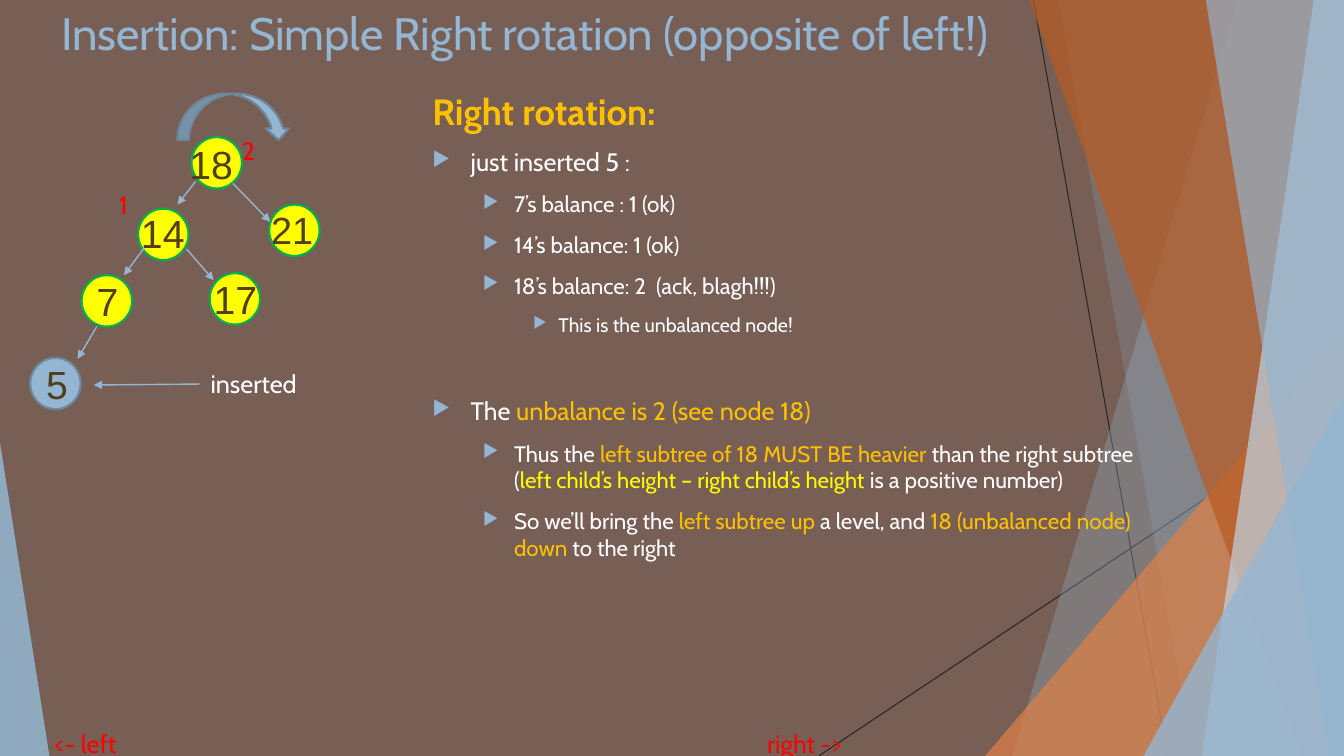
from dataclasses import dataclass

from pptx import Presentation
from pptx.dml.color import RGBColor
from pptx.enum.shapes import MSO_CONNECTOR as Link, MSO_SHAPE as Preset
from pptx.enum.text import MSO_ANCHOR as Anchor
from pptx.oxml.ns import qn
from pptx.util import Inches, Pt
from lxml.etree import SubElement


@dataclass(frozen=True)
class Theme:
    background: str = "775F55"
    accent: str = "94B6D2"
    outline: str = "6D879B"
    pale: str = "BFD3E4"
    orange: str = "DD8047"
    rust: str = "B95B22"
    hairline: str = "262626"
    node: str = "FFFF00"
    ring: str = "00B050"
    digit: str = "513E1B"
    body: str = "FFFFFF"
    key: str = "FFC000"
    alert: str = "FF0000"
    font: str = "Cabin"
    digit_font: str = "Arial"
    title_size: float = 32.4
    heading_size: float = 26
    digit_size: float = 28
    label_size: float = 18
    level_sizes: tuple = (18, 16, 14)
    level_indents: tuple = ((0.38, 0.38), (0.81, 0.31), (1.25, 0.25))


class SlideBuilder:
    def __init__(self, slide, theme):
        self.slide = slide
        self.theme = theme
        slide.background.fill.solid()
        slide.background.fill.fore_color.rgb = RGBColor.from_string(theme.background)

    def paint(self, shape, color, opacity=100, outline=None):
        shape.shadow.inherit = False
        shape.fill.solid()
        shape.fill.fore_color.rgb = RGBColor.from_string(color)
        if opacity < 100:
            tint = shape._element.spPr.find(qn("a:solidFill"))[0]
            SubElement(tint, qn("a:alpha")).set("val", str(opacity * 1000))
        if outline:
            shape.line.color.rgb = RGBColor.from_string(outline)
            shape.line.width = Pt(1.5)
        else:
            shape.line.fill.background()

    def preset(self, kind, box, color, opacity=100, outline=None, apex=None):
        shape = self.slide.shapes.add_shape(kind, *map(Inches, box))
        if apex is not None:
            shape.adjustments[0] = apex
        self.paint(shape, color, opacity, outline)

    def panel(self, top_left, bottom_left, color, opacity):
        right, bottom = 13.33, 7.5
        outline = self.slide.shapes.build_freeform(Inches(top_left), 0)
        corners = [(right, 0), (right, bottom), (bottom_left, bottom)]
        outline.add_line_segments([(Inches(x), Inches(y)) for x, y in corners])
        self.paint(outline.convert_to_shape(), color, opacity)

    def line(self, start, end, color, width, arrow=False):
        link = self.slide.shapes.add_connector(
            Link.STRAIGHT, *map(Inches, start + end))
        link.line.color.rgb = RGBColor.from_string(color)
        link.line.width = Pt(width)
        if arrow:
            SubElement(link.line._get_or_add_ln(), qn("a:tailEnd")).set("type", "triangle")
        SubElement(link._element.spPr, qn("a:effectLst"))

    def style(self, run, size, color, font=None, bold=False):
        run.font.name = font or self.theme.font
        run.font.size = Pt(size)
        run.font.bold = bold
        run.font.color.rgb = RGBColor.from_string(color)

    def frame(self, box):
        frame = self.slide.shapes.add_textbox(*map(Inches, box)).text_frame
        frame.word_wrap = True
        return frame

    def label(self, text, box, size, color, font=None):
        frame = self.frame(box)
        frame.text = text
        self.style(frame.paragraphs[0].runs[0], size, color, font)
        return frame

    def tree_node(self, value, circle, label, color, outline, size):
        self.preset(Preset.OVAL, (*circle, 0.5, 0.51), color, outline=outline)
        self.label(value, (*label, 0.65, 0.57), size, self.theme.digit,
                   self.theme.digit_font)

    def side_markers(self, text, box, stop):
        frame = self.label(text, box, self.theme.label_size, self.theme.alert)
        frame.vertical_anchor = Anchor.MIDDLE
        stops = SubElement(frame.paragraphs[0]._p.get_or_add_pPr(), qn("a:tabLst"))
        tab = SubElement(stops, qn("a:tab"))
        tab.set("pos", str(Inches(stop)))
        tab.set("algn", "l")

    def bullet(self, paragraph, level, pieces, gap):
        paragraph.level = level
        paragraph.space_before = Pt(gap)
        for text, color in pieces:
            if text == "\n":
                paragraph.add_line_break()
                continue
            run = paragraph.add_run()
            run.text = text
            self.style(run, self.theme.level_sizes[level], color)
        margin, hanging = self.theme.level_indents[level]
        props = paragraph._p.get_or_add_pPr()
        props.set("marL", str(Inches(margin)))
        props.set("indent", str(-Inches(hanging)))
        tint = SubElement(props, qn("a:buClr"))
        SubElement(tint, qn("a:srgbClr")).set("val", self.theme.accent)
        SubElement(props, qn("a:buSzPct")).set("val", "80000")
        SubElement(props, qn("a:buChar")).set("char", "▶")

    def explanation(self, heading, points, box):
        frame = self.frame(box)
        frame.text = heading
        frame.paragraphs[0].space_before = Pt(10)
        self.style(frame.paragraphs[0].runs[0], self.theme.heading_size,
                   self.theme.key, bold=True)
        for level, pieces, gap in points:
            self.bullet(frame.add_paragraph(), level, pieces, gap)


def main():
    deck = Presentation()
    deck.slide_width, deck.slide_height = Inches(13.33), Inches(7.5)
    theme = Theme()
    page = SlideBuilder(deck.slides.add_slide(deck.slide_layouts[6]), theme)

    page.line((10.25, 0), (11.58, 7.5), theme.hairline, 0.75)
    page.line((13.33, 4.03), (8.12, 7.5), theme.hairline, 0.75)
    page.panel(12.28, 10.04, theme.accent, 30)
    page.panel(10.5, 11.83, theme.accent, 20)
    page.preset(Preset.ISOSCELES_TRIANGLE, (9.77, 3.33, 3.56, 4.17), theme.orange, 72, apex=1)
    page.panel(10.21, 12.91, theme.rust, 70)
    page.panel(13.03, 11.92, theme.pale, 70)
    page.panel(11.96, 13.18, theme.accent, 65)
    page.preset(Preset.ISOSCELES_TRIANGLE, (11.34, 3.93, 1.99, 3.57), theme.accent, 80, apex=1)
    page.preset(Preset.ISOSCELES_TRIANGLE, (0, 4.39, 0.49, 3.11), theme.accent, 85, apex=0)

    page.label("Insertion: Simple Right rotation (opposite of left!)",
               (0.51, 0, 10.45, 0.77), theme.title_size, theme.accent)
    page.side_markers("<- left\tright ->", (0.44, 7.18, 11.74, 0.4), 7.07)

    plain, key = theme.body, theme.key
    points = [
        (0, [("just inserted 5 :", plain)], 10),
        (1, [("7’s balance : 1 (ok)", plain)], 10),
        (1, [("14’s balance: 1 (ok)", plain)], 10),
        (1, [("18’s balance: 2  (ack, blagh!!!)", plain)], 10),
        (2, [("This is the unbalanced node!", plain)], 10),
        (0, [("The ", plain), ("unbalance is 2 (see node 18)", key)], 42),
        (1, [("Thus the ", plain), ("left subtree of 18 MUST BE heavier ", key),
             ("than the right subtree ", plain), ("\n", plain), ("(", plain),
             ("left child’s height – right child’s height ", theme.node),
             ("is a positive number)", plain)], 10),
        (1, [("So we’ll bring the ", plain), ("left subtree up ", key),
             ("a level, and ", plain), ("18 (unbalanced node) down ", key),
             ("to the right", plain)], 10),
    ]
    page.explanation("Right rotation:", points, (4.19, 0.83, 7.39, 6.25))

    tree = [
        ("18", (1.9, 1.36), (1.78, 1.34), theme.digit_size),
        ("14", (1.37, 2.07), (1.3, 2.03), theme.digit_size),
        ("21", (2.67, 2.03), (2.59, 2), 27),
        ("17", (2.08, 2.71), (2.02, 2.68), theme.digit_size),
        ("7", (0.81, 2.73), (0.86, 2.7), theme.digit_size),
    ]
    for value, circle, label, size in tree:
        page.tree_node(value, circle, label, theme.node, theme.ring, size)
    page.tree_node("5", (0.3, 3.55), (0.36, 3.53), theme.accent, theme.outline,
                   theme.digit_size)

    branches = [
        ((1.98, 3.81), (0.93, 3.82)),
        ((2.31, 1.82), (2.68, 2.2)),
        ((1.85, 2.47), (2.12, 2.78)),
        ((1.43, 2.46), (1.23, 2.73)),
        ((1.94, 1.8), (1.76, 2.03)),
        ((0.96, 3.24), (0.77, 3.56)),
    ]
    for start, end in branches:
        page.line(start, end, theme.accent, 1, arrow=True)

    page.label("inserted", (1.99, 3.61, 1.13, 0.4), theme.label_size, theme.body)
    for balance, left, top in (("1", 1.08, 1.83), ("2", 2.3, 1.29)):
        page.label(balance, (left, top, 0.34, 0.4), theme.label_size, theme.alert)
    page.preset(Preset.CURVED_DOWN_ARROW, (1.76, 0.93, 1.12, 0.46), theme.accent,
                outline=theme.outline)

    deck.save("out.pptx")


if __name__ == "__main__":
    main()
